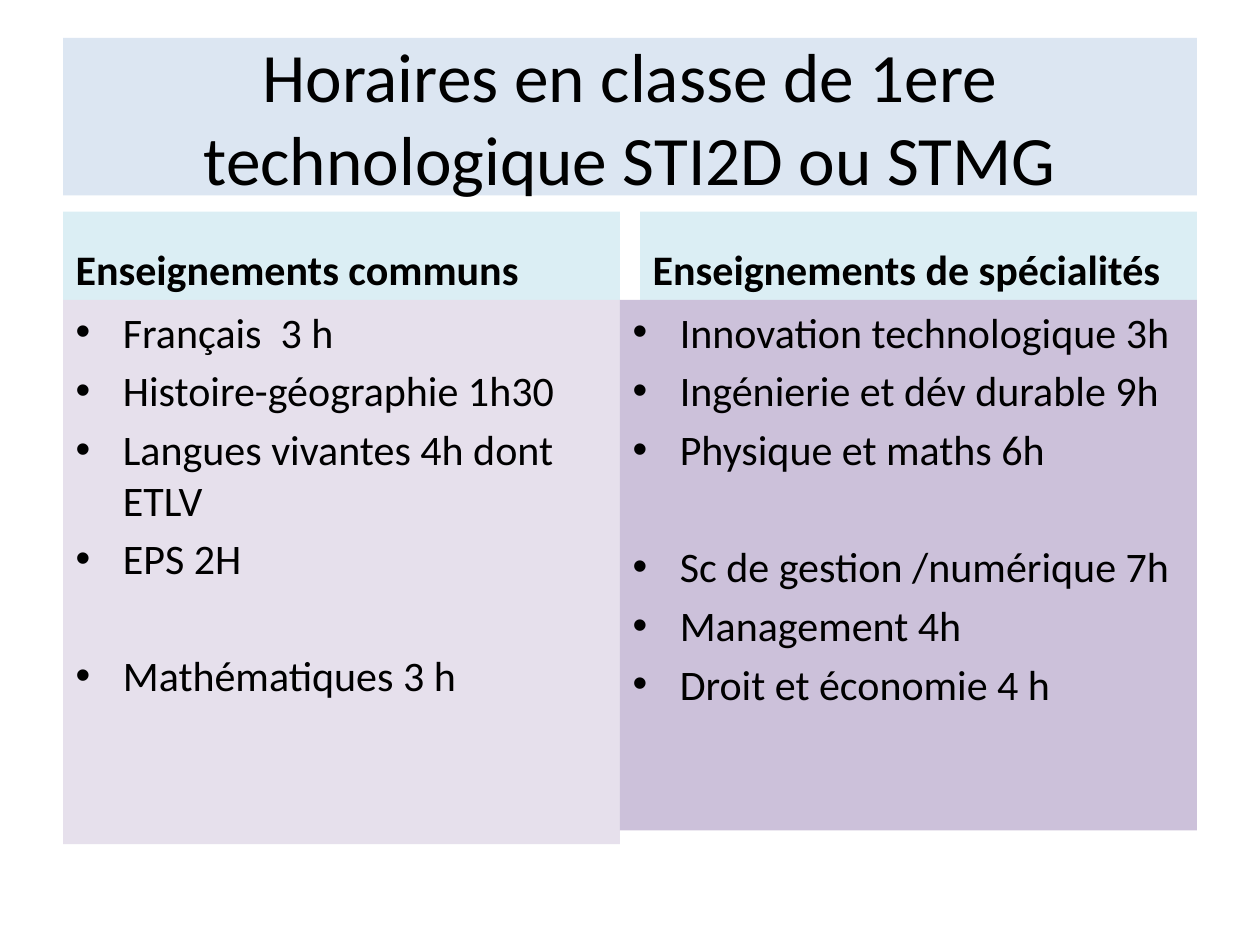
from pptx import Presentation
from pptx.dml.color import RGBColor
from pptx.enum.text import MSO_ANCHOR, MSO_AUTO_SIZE, PP_ALIGN
from pptx.util import Inches, Pt

TOP, MIDDLE, BOTTOM = MSO_ANCHOR.TOP, MSO_ANCHOR.MIDDLE, MSO_ANCHOR.BOTTOM
NO_FIT = MSO_AUTO_SIZE.NONE
CENTER, LEFT = PP_ALIGN.CENTER, PP_ALIGN.LEFT
COMPARISON_LAYOUT = 4
GROUP_GAP = Pt(38)

COLORS = {
    "text": "000000",
    "title": "DCE6F2",
    "heading": "DBEEF4",
    "common": "E6E0EC",
    "specialty": "CCC1DA",
}

TITLE_FORMAT = {"size": Pt(39.6), "bold": False, "name": "Calibri"}
HEADING_FORMAT = {"size": Pt(24), "bold": True, "name": "Calibri"}
LIST_FORMAT = {"size": Pt(24), "bold": False, "name": "Calibri"}

common_groups = [
    ["Français  3 h", "Histoire-géographie 1h30", "Langues vivantes 4h dont ETLV", "EPS 2H"],
    ["Mathématiques 3 h"],
]
specialty_groups = [
    ["Innovation technologique 3h", "Ingénierie et dév durable 9h", "Physique et maths 6h"],
    ["Sc de gestion /numérique 7h", "Management 4h", "Droit et économie 4 h"],
]

blocks = [
    (0, (0.5, 0.3, 9, 1.25), "title", MIDDLE, CENTER, TITLE_FORMAT,
     [["Horaires en classe de 1ere technologique STI2D ou STMG"]]),
    (1, (0.5, 1.68, 4.42, 0.7), "heading", BOTTOM, LEFT, HEADING_FORMAT,
     [["Enseignements communs"]]),
    (2, (0.5, 2.38, 4.42, 4.32), "common", TOP, LEFT, LIST_FORMAT, common_groups),
    (3, (5.08, 1.68, 4.42, 0.7), "heading", BOTTOM, LEFT, HEADING_FORMAT,
     [["Enseignements de spécialités"]]),
    (4, (4.92, 2.38, 4.58, 4.21), "specialty", TOP, LEFT, LIST_FORMAT, specialty_groups),
]

deck = Presentation()
deck.slide_width, deck.slide_height = Inches(10), Inches(7.5)
page = deck.slides.add_slide(deck.slide_layouts[COMPARISON_LAYOUT])
placeholders = {box.placeholder_format.idx: box for box in page.placeholders}

for index, place, color, anchor, align, font_format, groups in blocks:
    box = placeholders[index]
    box.left, box.top, box.width, box.height = [Inches(length) for length in place]
    box.fill.solid()
    box.fill.fore_color.rgb = RGBColor.from_string(COLORS[color])
    frame = box.text_frame
    frame.auto_size = NO_FIT
    frame.vertical_anchor = anchor
    frame.text = "\n".join(line for group in groups for line in group)
    group_starts = {group[0] for group in groups[1:]}
    for para in frame.paragraphs:
        para.alignment = align
        if para.text in group_starts:
            para.space_before = GROUP_GAP
        for span in para.runs:
            span.font.color.rgb = RGBColor.from_string(COLORS["text"])
            for name, value in font_format.items():
                setattr(span.font, name, value)

deck.save("out.pptx")
